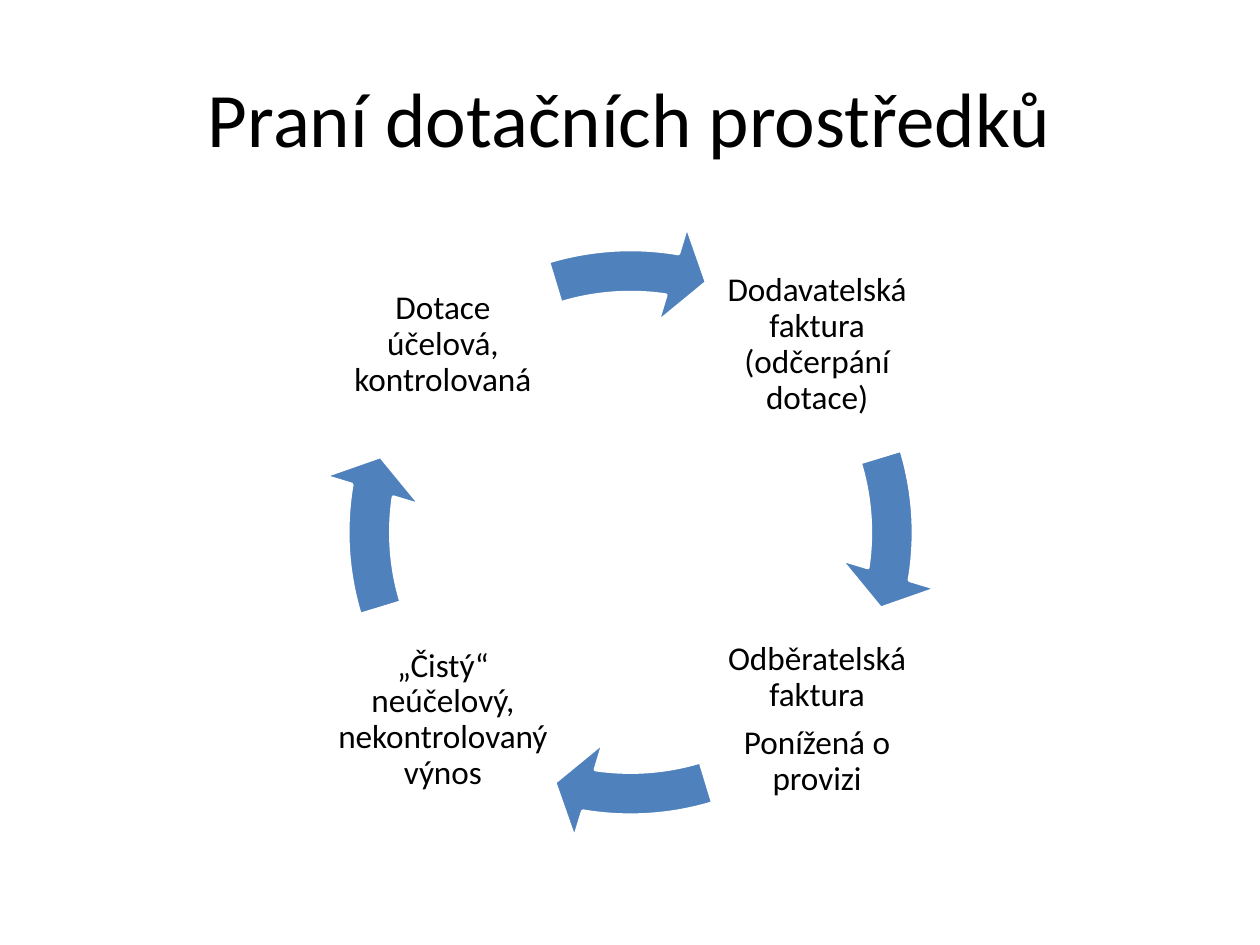
from dataclasses import dataclass

from pptx import Presentation
from pptx.dml.color import RGBColor
from pptx.enum.shapes import MSO_SHAPE
from pptx.enum.text import MSO_ANCHOR, PP_ALIGN
from pptx.util import Inches, Pt


@dataclass(frozen=True)
class Theme:
    font: str = "Calibri"
    text: RGBColor = RGBColor(0x00, 0x00, 0x00)
    arrow: RGBColor = RGBColor(0x4F, 0x81, 0xBD)
    outline: RGBColor = RGBColor(0xFF, 0xFF, 0xFF)
    title_size: int = 44
    label_size: int = 19
    outline_width: int = 2
    label_spacing: float = 0.9
    paragraph_gap: int = 7


class CyclePage:
    """Draws the parts of a cycle diagram on one slide."""

    def __init__(self, page, theme):
        self.page = page
        self.theme = theme

    def text(self, left, top, width, height, lines, size, inset, spacing):
        box = self.page.shapes.add_textbox(
            Inches(left), Inches(top), Inches(width), Inches(height))
        frame = box.text_frame
        frame.word_wrap = True
        frame.vertical_anchor = MSO_ANCHOR.MIDDLE
        frame.margin_left = frame.margin_right = Inches(inset)
        frame.margin_top = frame.margin_bottom = Inches(inset)
        for index, line in enumerate(lines):
            para = frame.add_paragraph() if index else frame.paragraphs[0]
            para.alignment = PP_ALIGN.CENTER
            para.line_spacing = spacing
            if index < len(lines) - 1:
                para.space_after = Pt(self.theme.paragraph_gap)
            span = para.add_run()
            span.text = line
            span.font.name = self.theme.font
            span.font.size = Pt(size)
            span.font.color.rgb = self.theme.text

    def title(self, wording):
        self.text(0.5, 0.3, 9, 1.25, [wording], self.theme.title_size, 0.05, 1.0)

    def label(self, left, top, lines):
        self.text(left, top, 1.75, 1.75, lines, self.theme.label_size,
                  0.03, self.theme.label_spacing)

    def arrow(self, quarter):
        full_turn, quarter_turn = 216, 54
        shape = self.page.shapes.add_shape(
            MSO_SHAPE.CIRCULAR_ARROW,
            Inches(2.53), Inches(1.75), Inches(4.95), Inches(4.95))
        head = 5.49 + quarter * quarter_turn
        tail = (205.855 + quarter * quarter_turn) % full_turn
        for index, value in enumerate((0.069, 4.654, head, tail, 0.081)):
            shape.adjustments[index] = value
        shape.shadow.inherit = False
        shape.fill.solid()
        shape.fill.fore_color.rgb = self.theme.arrow
        shape.line.color.rgb = self.theme.outline
        shape.line.width = Pt(self.theme.outline_width)


def main():
    deck = Presentation()
    deck.slide_width, deck.slide_height = Inches(10), Inches(7.5)
    cycle = CyclePage(deck.slides.add_slide(deck.slide_layouts[6]), Theme())
    cycle.title("Praní dotačních prostředků")

    left, right, top, bottom = 2.64, 5.61, 1.86, 4.84
    stages = [
        (right, top, ["Dodavatelská faktura (odčerpání dotace)"]),
        (right, bottom, ["Odběratelská faktura", "Ponížená o provizi"]),
        (left, bottom, ["„Čistý“ neúčelový, nekontrolovaný výnos"]),
        (left, top, ["Dotace účelová, kontrolovaná"]),
    ]
    for quarter, stage in enumerate(stages):
        cycle.label(*stage)
        cycle.arrow(quarter)
    deck.save("out.pptx")


if __name__ == "__main__":
    main()
